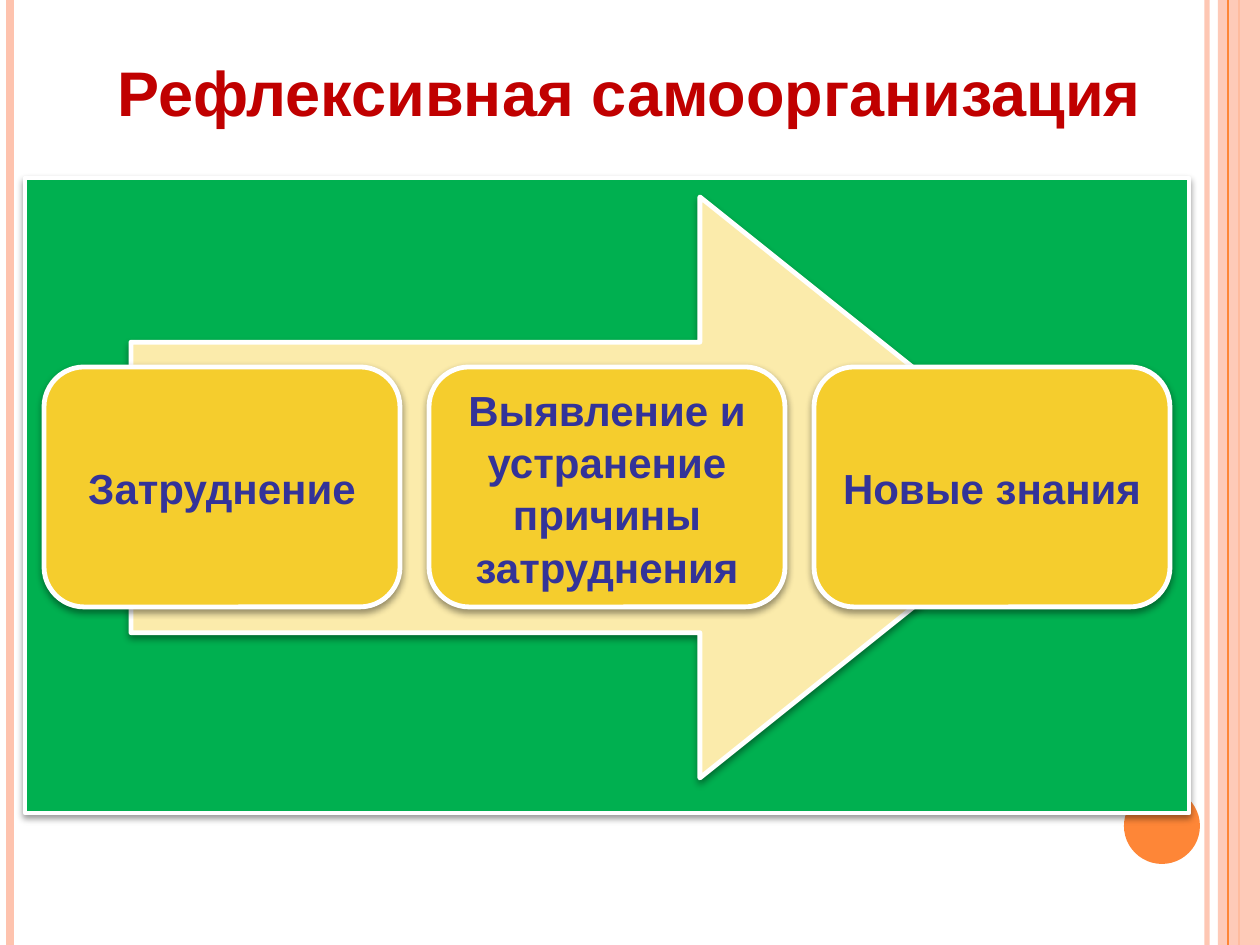
import pptx
import pptx.util
import pptx.dml.color
import pptx.enum.shapes
import pptx.enum.text
import pptx.oxml
import pptx.oxml.ns

SCALE = 914400 / 126
MSO = pptx.enum.shapes.MSO_SHAPE
NS = pptx.oxml.ns.nsdecls("a")


def rgb(color):
    return pptx.dml.color.RGBColor.from_string(color)


def px(*values):
    return [pptx.util.Emu(round(v * SCALE)) for v in values]


prs = pptx.Presentation()
prs.slide_width, prs.slide_height = px(1260, 945)
s = prs.slides.add_slide(prs.slide_layouts[5])

for x, color, width, alpha in [
    (1207, "FEC3AE", 3, 93),
    (10, "FEC3AE", 4.5, 100),
    (1239, "FE8637", 1.5, 100),
    (1218, "FEC3AE", 0, 87),
    (1228, "FE8637", 0.75, 100),
]:
    if width:
        sp = s.shapes.add_connector(pptx.enum.shapes.MSO_CONNECTOR.STRAIGHT, *px(x, 0, x, 945))
        sp.line.color.rgb = rgb(color)
        sp.line.width = pptx.util.Pt(width)
        sp._element.spPr.append(pptx.oxml.parse_xml(f"<a:effectLst {NS}/>"))
    else:
        sp = s.shapes.add_shape(MSO.RECTANGLE, *px(x, 0, 42, 945))
        sp.shadow.inherit = False
        sp.fill.solid()
        sp.fill.fore_color.rgb = rgb(color)
        sp.line.fill.background()
    if alpha < 100:
        clr = sp._element.spPr.find(".//" + pptx.oxml.ns.qn("a:srgbClr"))
        clr.append(pptx.oxml.parse_xml(f'<a:alpha {NS} val="{alpha * 1000}"/>'))

sp = s.shapes.add_shape(MSO.OVAL, *px(1124, 788, 76, 76))
sp.shadow.inherit = False
sp.fill.solid()
sp.fill.fore_color.rgb = rgb("FE8637")
sp.line.fill.background()

title = s.shapes.title
title.left, title.top, title.width, title.height = px(63, 38, 1133, 97)
tf = title.text_frame
tf.word_wrap = True
tf.vertical_anchor = pptx.enum.text.MSO_ANCHOR.BOTTOM
p = tf.paragraphs[0]
p.alignment = pptx.enum.text.PP_ALIGN.CENTER
r = p.add_run()
r.text = "Рефлексивная самоорганизация"
r.font.name = "Arial"
r.font.size = pptx.util.Pt(36)
r.font.bold = True
r.font.color.rgb = rgb("C00000")

diagram = s.shapes.add_group_shape()
steps = ["Затруднение", "Выявление и устранение причины затруднения", "Новые знания"]
parts = [
    (MSO.RECTANGLE, (25, 178, 1164, 635), "00B050", ""),
    (MSO.RIGHT_ARROW, (131, 197, 932, 581), "FBEBAB", ""),
]
for i, step in enumerate(steps):
    parts.append((MSO.ROUNDED_RECTANGLE, (44 + 385 * i, 367, 356, 240), "F5CD2D", step))

for kind, box, color, text in parts:
    sp = diagram.shapes.add_shape(kind, *px(*box))
    sp.fill.solid()
    sp.fill.fore_color.rgb = rgb(color)
    sp.line.color.rgb = rgb("FFFFFF")
    sp.line.width = pptx.util.Pt(2.75)
    sp._element.spPr.append(pptx.oxml.parse_xml(
        f'<a:effectLst {NS}><a:outerShdw blurRad="50800" dist="25400" dir="5400000" rotWithShape="0">'
        '<a:srgbClr val="000000"><a:alpha val="40000"/></a:srgbClr></a:outerShdw></a:effectLst>'))
    if kind == MSO.RIGHT_ARROW:
        sp.adjustments[0] = 0.5
        sp.adjustments[1] = 0.625
    if text:
        tf = sp.text_frame
        tf.word_wrap = True
        tf.vertical_anchor = pptx.enum.text.MSO_ANCHOR.MIDDLE
        tf.margin_left, tf.margin_right = px(6, 6)
        p = tf.paragraphs[0]
        p.alignment = pptx.enum.text.PP_ALIGN.CENTER
        p.line_spacing = 1.04
        r = p.add_run()
        r.text = text
        r.font.name = "Arial"
        r.font.size = pptx.util.Pt(24)
        r.font.bold = True
        r.font.color.rgb = rgb("333399")

prs.save("out.pptx")
